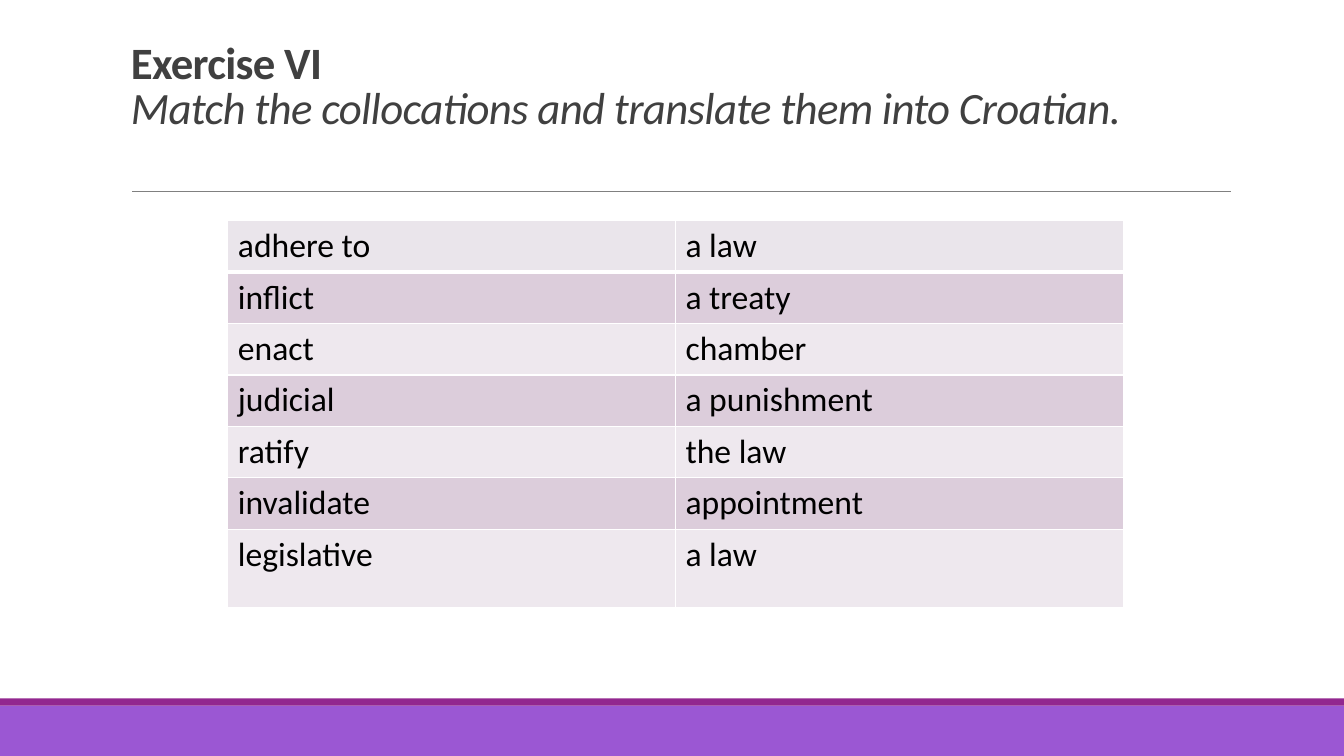
import lxml.etree
import pptx
import pptx.dml.color
import pptx.enum.shapes
import pptx.enum.text
import pptx.oxml.ns
import pptx.util

Inches = pptx.util.Inches
Pt = pptx.util.Pt
qn = pptx.oxml.ns.qn


def hue(code):
    return pptx.dml.color.RGBColor.from_string(code)


def style(run, look):
    run.font.color.rgb = hue(look["color"])
    for key in ("name", "size", "bold", "italic"):
        setattr(run.font, key, look[key])


deck = pptx.Presentation()
deck.slide_width = Inches(13.33)
deck.slide_height = Inches(7.5)
slide = deck.slides.add_slide(deck.slide_layouts[6])

for top, high, code in ((7, 0.5, "9B57D3"), (6.93, 0.07, "92278F")):
    band = slide.shapes.add_shape(
        pptx.enum.shapes.MSO_SHAPE.RECTANGLE,
        Inches(0), Inches(top), Inches(13.33), Inches(high))
    band.shadow.inherit = False
    band.fill.solid()
    band.fill.fore_color.rgb = hue(code)
    band.line.fill.background()

rule = slide.shapes.add_connector(
    pptx.enum.shapes.MSO_CONNECTOR.STRAIGHT,
    Inches(1.31), Inches(1.9), Inches(12.21), Inches(1.9))
rule.line.color.rgb = hue("808080")
rule.line.width = Pt(0.5)
lxml.etree.SubElement(rule.element.spPr, qn("a:effectLst"))

title = slide.shapes.add_textbox(Inches(1.2), Inches(0.31), Inches(11), Inches(1.59))
frame = title.text_frame
format = {
    "word_wrap": True,
    "vertical_anchor": pptx.enum.text.MSO_ANCHOR.BOTTOM,
    "margin_bottom": Inches(0.57),
}
for key, value in format.items():
    setattr(frame, key, value)
para = frame.paragraphs[0]
para.line_spacing = 0.85
head = {"name": "Calibri", "size": Pt(32), "color": "404040"}
parts = (("Exercise VI", True), ("Match the collocations and translate them into Croatian.", False))
for text, bold in parts:
    if not bold:
        para.add_line_break()
    run = para.add_run()
    run.text = text
    style(run, {**head, "bold": bold, "italic": not bold})
    run.font._element.set("spc", "-50")

pairs = (
    ("adhere to", "a law"),
    ("inflict", "a treaty"),
    ("enact", "chamber"),
    ("judicial", "a punishment"),
    ("ratify", "the law"),
    ("invalidate", "appointment"),
    ("legislative", "a law"),
)
body = {"name": "Calibri", "size": Pt(24), "color": "000000", "bold": False, "italic": False}
grid = slide.shapes.add_table(
    len(pairs), 2, Inches(2.26), Inches(2.19), Inches(8.88), Inches(3.84)).table
grid.first_row = False
grid.horz_banding = False
for col in grid.columns:
    col.width = Inches(4.44)
for i, pair in enumerate(pairs):
    grid.rows[i].height = Inches(0.78 if i == len(pairs) - 1 else 0.51)
    for j, text in enumerate(pair):
        cell = grid.cell(i, j)
        props = cell._tc.get_or_add_tcPr()
        for side in "LRTB":
            thick = (i, side) in ((0, "B"), (1, "T"))
            edge = lxml.etree.SubElement(props, qn("a:ln" + side), w=str(Pt(3 if thick else 1)))
            paint = lxml.etree.SubElement(edge, qn("a:solidFill"))
            lxml.etree.SubElement(paint, qn("a:srgbClr"), val="FFFFFF")
        cell.fill.solid()
        cell.fill.fore_color.rgb = hue("EAE5EB" if i == 0 else "DCCDDB" if i % 2 else "EEE8EE")
        run = cell.text_frame.paragraphs[0].add_run()
        run.text = text
        style(run, body)

deck.save("out.pptx")
